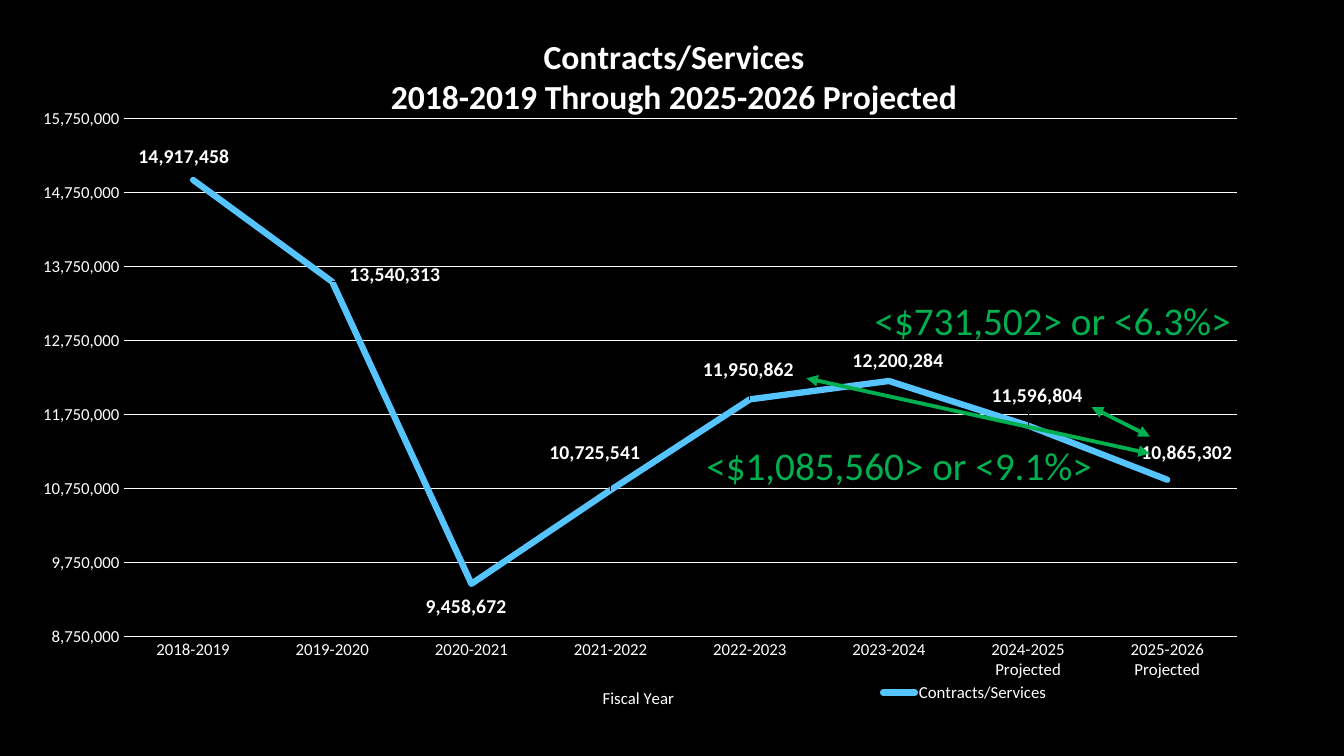
from lxml import etree
from pptx import Presentation
from pptx.chart.data import CategoryChartData
from pptx.dml.color import RGBColor
from pptx.enum.chart import XL_CHART_TYPE as ChartType
from pptx.enum.chart import XL_LABEL_POSITION as LabelPosition
from pptx.enum.chart import XL_LEGEND_POSITION as LegendPosition
from pptx.enum.chart import XL_TICK_MARK as TickMark
from pptx.enum.shapes import MSO_CONNECTOR as Connector
from pptx.enum.text import MSO_AUTO_SIZE as AutoSize
from pptx.oxml.ns import qn
from pptx.util import Cm, Pt

BLACK = RGBColor(0x00, 0x00, 0x00)
WHITE = RGBColor(0xFF, 0xFF, 0xFF)
SKY = RGBColor(0x56, 0xC5, 0xFF)
GREEN = RGBColor(0x00, 0xB0, 0x50)
FONT = "Calibri"
NUMBER = "#,##0"

# Fiscal year, spending, label side, label shift as a share of the chart
SPENDING = [
    ("2018-2019", 14917458, LabelPosition.ABOVE, (-0.007, -0.01)),
    ("2019-2020", 13540313, LabelPosition.RIGHT, (0.01, -0.01)),
    ("2020-2021", 9458672, LabelPosition.BELOW, (-0.004, 0.01)),
    ("2021-2022", 10725541, LabelPosition.ABOVE, (-0.012, -0.03)),
    ("2022-2023", 11950862, LabelPosition.ABOVE, (-0.001, -0.02)),
    ("2023-2024", 12200284, LabelPosition.ABOVE, (0.007, -0.006)),
    ("2024-2025 Projected", 11596804, LabelPosition.ABOVE, (0.007, -0.02)),
    ("2025-2026 Projected", 10865302, LabelPosition.ABOVE, (0.015, -0.015)),
]


def style_font(font, size, color=WHITE, bold=False):
    font.name = FONT
    font.size = Pt(size)
    font.bold = bold
    font.color.rgb = color


def style_line(line, color, width):
    line.color.rgb = color
    line.width = Pt(width)


def set_layout(parent, index, settings):
    """Give a chart part a manual layout, as its child number index."""
    for old in parent.findall(qn("c:layout")):
        parent.remove(old)
    layout = etree.Element(qn("c:layout"))
    manual = etree.SubElement(layout, qn("c:manualLayout"))
    for name, value in settings.items():
        etree.SubElement(manual, qn(f"c:{name}")).set("val", str(value))
    parent.insert(index, layout)


def at_edge(x, y, **size):
    return {"xMode": "edge", "yMode": "edge", "x": x, "y": y, **size}


def write_title(title, lines, size, bold, x, y):
    frame = title.text_frame
    for number, line in enumerate(lines):
        para = frame.add_paragraph() if number else frame.paragraphs[0]
        span = para.add_run()
        span.text = line
        style_font(span.font, size, bold=bold)
    set_layout(title._element, 1, at_edge(x, y))


def style_axes(chart):
    years, amounts = chart.category_axis, chart.value_axis
    for axis in (years, amounts):
        axis.major_tick_mark = axis.minor_tick_mark = TickMark.NONE
        style_font(axis.tick_labels.font, 12)
    style_line(years.format.line, WHITE, 0.75)
    write_title(years.axis_title, ["Fiscal Year"], 12, False, 0.446, 0.96)

    amounts.minimum_scale = 8750000
    amounts.maximum_scale = 15750000
    amounts.major_unit = 1000000
    amounts.format.line.fill.background()
    amounts.tick_labels.number_format = NUMBER
    amounts.tick_labels.number_format_is_linked = False
    style_line(amounts.major_gridlines.format.line, WHITE, 0.75)


def style_series(series):
    series.smooth = False
    style_line(series.format.line, SKY, 4.5)
    series.format.line._get_or_add_ln().set("cap", "rnd")
    labels = series.data_labels
    labels.show_value = True
    labels.number_format = NUMBER
    labels.number_format_is_linked = False
    style_font(labels.font, 14, bold=True)
    for number, (_, _, side, _) in enumerate(SPENDING):
        label = series.points[number].data_label
        style_font(label.font, 14, bold=True)
        label.position = side
    point_labels = series._element.xpath("c:dLbls/c:dLbl")
    for element, (_, _, _, (x, y)) in zip(point_labels, SPENDING):
        set_layout(element, 1, {"x": x, "y": y})


def add_spending_chart(slide):
    data = CategoryChartData(number_format=NUMBER)
    data.categories = [row[0] for row in SPENDING]
    data.add_series("Contracts/Services", [row[1] for row in SPENDING])
    chart = slide.shapes.add_chart(
        ChartType.LINE, Cm(0.41), Cm(0.2), Cm(32.97), Cm(17.78), data).chart
    style_font(chart.font, 10)
    chart.plots[0].vary_by_categories = False
    write_title(
        chart.chart_title,
        ["Contracts/Services", "2018-2019 Through 2025-2026 Projected"],
        24, True, 0.284, 0.035)
    style_axes(chart)
    style_series(chart.plots[0].series[0])

    chart.has_legend = True
    chart.legend.position = LegendPosition.BOTTOM
    chart.legend.include_in_layout = False
    style_font(chart.legend.font, 12)
    set_layout(chart.legend._element, 1, at_edge(0.655, 0.953, w=0.14, h=0.04))
    set_layout(chart._chartSpace.chart.plotArea, 0, {
        "layoutTarget": "inner", **at_edge(0.082, 0.157, w=0.851, h=0.736)})


def add_double_arrow(slide, *ends):
    arrow = slide.shapes.add_connector(
        Connector.STRAIGHT, *[Cm(end) for end in ends])
    style_line(arrow.line, GREEN, 2.75)
    outline = arrow.line._get_or_add_ln()
    for name in ("a:headEnd", "a:tailEnd"):
        etree.SubElement(outline, qn(name)).set("type", "triangle")
    etree.SubElement(arrow._element.spPr, qn("a:effectLst"))


def add_change(slide, text, left, top, width):
    box = slide.shapes.add_textbox(Cm(left), Cm(top), Cm(width), Cm(1.45))
    frame = box.text_frame
    frame.word_wrap = False
    frame.auto_size = AutoSize.SHAPE_TO_FIT_TEXT
    span = frame.paragraphs[0].add_run()
    span.text = text
    style_font(span.font, 28, GREEN)


def main():
    deck = Presentation()
    deck.slide_width, deck.slide_height = Cm(33.87), Cm(19.05)
    slide = deck.slides.add_slide(deck.slide_layouts[6])
    slide.background.fill.solid()
    slide.background.fill.fore_color.rgb = BLACK
    add_spending_chart(slide)
    add_double_arrow(slide, 27.51, 10.26, 28.98, 11)
    add_change(slide, "<$731,502> or <6.3%>", 21.79, 7.34, 9.63)
    add_change(slide, "<$1,085,560> or <9.1%>", 17.55, 11, 10.36)
    add_double_arrow(slide, 20.32, 9.53, 28.98, 11.43)
    deck.save("out.pptx")


if __name__ == "__main__":
    main()
